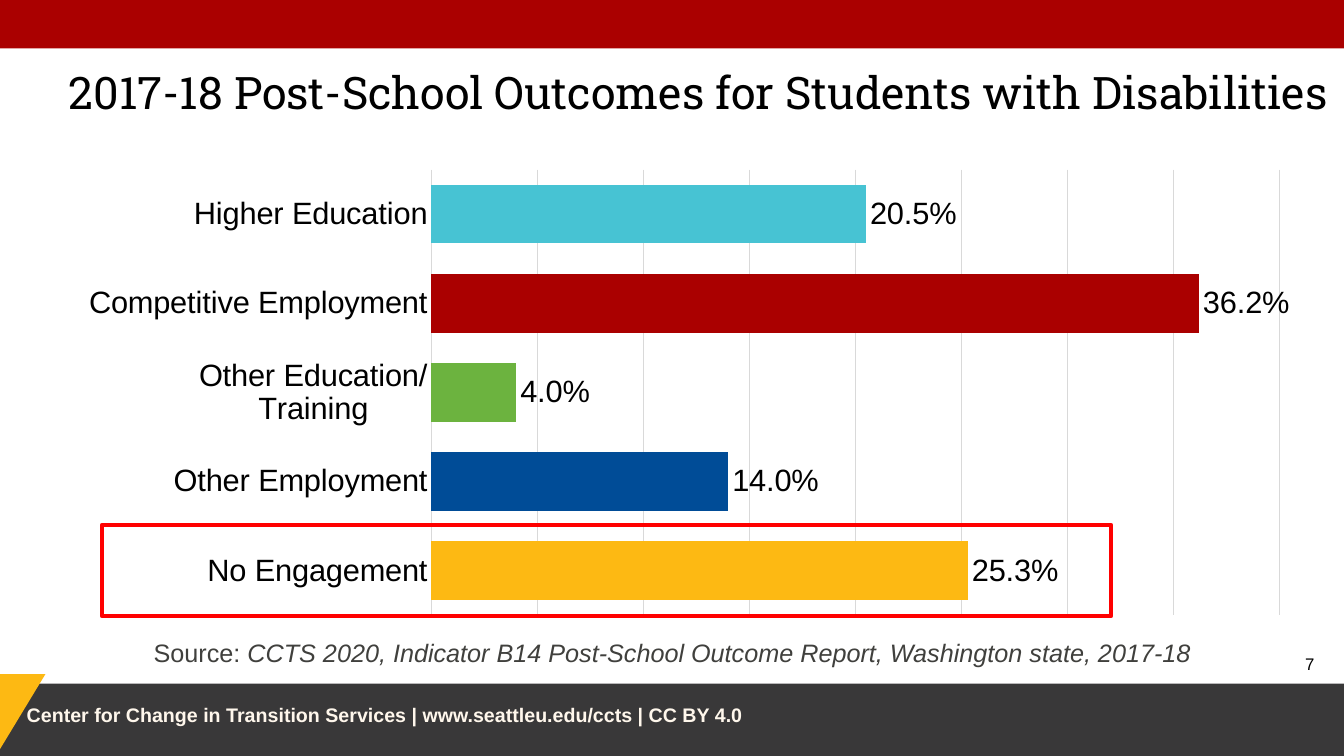
from dataclasses import dataclass

from lxml import etree
from pptx import Presentation
from pptx import util as u
from pptx.chart import data
from pptx.dml.color import RGBColor
from pptx.enum import chart as charts, shapes, text

C_NS = "http://schemas.openxmlformats.org/drawingml/2006/chart"


@dataclass(frozen=True)
class Theme:
    red: str = "AA0000"
    dark: str = "393839"
    gold: str = "FDB913"
    blue: str = "004C97"
    green: str = "6CB33F"
    teal: str = "47C3D3"
    cream: str = "FFF7EC"
    gray: str = "40403D"
    black: str = "000000"
    grid: str = "D9D9D9"
    alert: str = "FF0000"
    body: str = "Arial"
    head: str = "Roboto Slab"
    title: int = 32
    label: int = 22
    source: int = 18
    footer: int = 14
    number: int = 12


class Deck:
    def __init__(self, theme):
        self.theme = theme
        self.prs = Presentation()
        self.prs.slide_width, self.prs.slide_height = u.Pt(960), u.Pt(540)
        self.slide = self.prs.slides.add_slide(self.prs.slide_layouts[5])

    def font(self, font, size, color, name=None, **style):
        values = {"size": u.Pt(size), "name": name or self.theme.body, **style}
        for key, value in values.items():
            setattr(font, key, value)
        font.color.rgb = RGBColor.from_string(color)

    def line(self, line, color, width):
        line.color.rgb = RGBColor.from_string(color)
        line.width = u.Pt(width)

    def title(self, words, *box):
        shape = self.slide.shapes.title
        for key, value in zip(("left", "top", "width", "height"), box):
            setattr(shape, key, u.Pt(value))
        frame = shape.text_frame
        frame.text = words
        frame.word_wrap = True
        frame.auto_size = text.MSO_AUTO_SIZE.NONE
        frame.vertical_anchor = text.MSO_ANCHOR.MIDDLE
        para = frame.paragraphs[0]
        para.alignment, para.line_spacing = text.PP_ALIGN.LEFT, 0.9
        self.font(para.runs[0].font, self.theme.title, self.theme.black, self.theme.head)

    def shape(self, kind, *box, fill=None, edge=None):
        shape = self.slide.shapes.add_shape(kind, *map(u.Pt, box))
        shape.shadow.inherit = False
        if fill:
            shape.fill.solid()
            shape.fill.fore_color.rgb = RGBColor.from_string(fill)
        else:
            shape.fill.background()
        if edge:
            self.line(shape.line, edge, 3)
        else:
            shape.line.fill.background()
        return shape

    def text(self, runs, *box, size, color, align="LEFT", anchor="TOP"):
        frame = self.slide.shapes.add_textbox(*map(u.Pt, box)).text_frame
        frame.word_wrap = True
        frame.vertical_anchor = text.MSO_ANCHOR[anchor]
        para = frame.paragraphs[0]
        para.alignment = text.PP_ALIGN[align]
        for words, style in runs:
            run = para.add_run()
            run.text = words
            self.font(run.font, size, color, **style)

    def bars(self, rows, *box, plot):
        th = self.theme
        source = data.CategoryChartData(number_format="0.0%")
        source.categories = [name for name, _, _ in rows]
        source.add_series("Series 1", [value for _, value, _ in rows])
        chart = self.slide.shapes.add_chart(
            charts.XL_CHART_TYPE.BAR_CLUSTERED, *map(u.Pt, box), source).chart
        chart.has_title = chart.has_legend = False
        self.font(chart.font, th.label, th.black)

        # Axes
        cat, val = chart.category_axis, chart.value_axis
        cat.major_tick_mark = charts.XL_TICK_MARK.NONE
        cat.has_major_gridlines = False
        self.font(cat.tick_labels.font, th.label, th.black)
        self.line(cat.format.line, th.grid, 0.75)
        scale = {"minimum_scale": 0, "maximum_scale": 0.4, "major_unit": 0.05,
                 "has_major_gridlines": True, "visible": False}
        for key, value in scale.items():
            setattr(val, key, value)
        self.line(val.major_gridlines.format.line, th.grid, 0.75)

        # Bars and their labels
        group = chart.plots[0]
        group.gap_width, group.vary_by_categories = 52, False
        group.has_data_labels = True
        labels = group.data_labels
        style = {"show_value": True, "number_format": "0.0%",
                 "number_format_is_linked": False,
                 "position": charts.XL_LABEL_POSITION.OUTSIDE_END}
        for key, value in style.items():
            setattr(labels, key, value)
        self.font(labels.font, th.label, th.black)
        for i, (_, _, color) in enumerate(rows):
            fill = group.series[0].points[i].format.fill
            fill.solid()
            fill.fore_color.rgb = RGBColor.from_string(color)
        self.place(chart, plot)

    def place(self, chart, plot):
        area = chart._chartSpace.find(f".//{{{C_NS}}}plotArea")
        for old in area.findall(f"{{{C_NS}}}layout"):
            area.remove(old)
        layout = etree.Element(f"{{{C_NS}}}layout")
        manual = etree.SubElement(layout, f"{{{C_NS}}}manualLayout")
        parts = [("layoutTarget", "inner"), ("xMode", "edge"), ("yMode", "edge"),
                 *zip("xywh", plot)]
        for tag, value in parts:
            etree.SubElement(manual, f"{{{C_NS}}}{tag}").set("val", str(value))
        area.insert(0, layout)


def main():
    th = Theme()
    deck = Deck(th)
    rect = shapes.MSO_SHAPE.RECTANGLE

    # Header and footer bands
    deck.shape(rect, 0, -0.5, 960, 35, fill=th.red)
    deck.shape(rect, 0, 488.4, 960, 55, fill=th.dark)
    deck.text([("Center for Change in Transition Services | www.seattleu.edu/ccts | CC BY 4.0",
                {"bold": True})],
              12, 498.5, 533, 24, size=th.footer, color=th.cream)
    corner = shapes.MSO_SHAPE.RIGHT_TRIANGLE
    wedge = deck.shape(corner, -0.5, 481.5, 33, 54.5, fill=th.gold)
    wedge._element.spPr.xfrm.set("flipV", "1")

    # Title
    deck.title("2017-18 Post-School Outcomes for Students with Disabilities",
               42, 28.5, 918, 79)

    # Outcome chart, bottom bar first
    rows = [("No Engagement", 0.253, th.gold),
            ("Other Employment", 0.14, th.blue),
            ("Other Education/\nTraining", 0.04, th.green),
            ("Competitive Employment", 0.362, th.red),
            ("Higher Education", 0.205, th.teal)]
    deck.bars(rows, 42, 114.5, 918, 335, plot=(0.29, 0.02, 0.66, 0.95))

    # Source and slide number
    deck.text([("Source: ", {}),
               ("CCTS 2020, Indicator B14 Post-School Outcome Report, "
                "Washington state, 2017-18", {"italic": True})],
              67, 451.5, 826.5, 29, size=th.source, color=th.gray, align="CENTER")
    deck.text([("7", {})], 912, 459.5, 34, 29, size=th.number, color=th.black,
              align="RIGHT", anchor="MIDDLE")

    # Highlight around the last bar
    deck.shape(rect, 72.7, 375, 721, 65, edge=th.alert)
    deck.prs.save("out.pptx")


if __name__ == "__main__":
    main()
